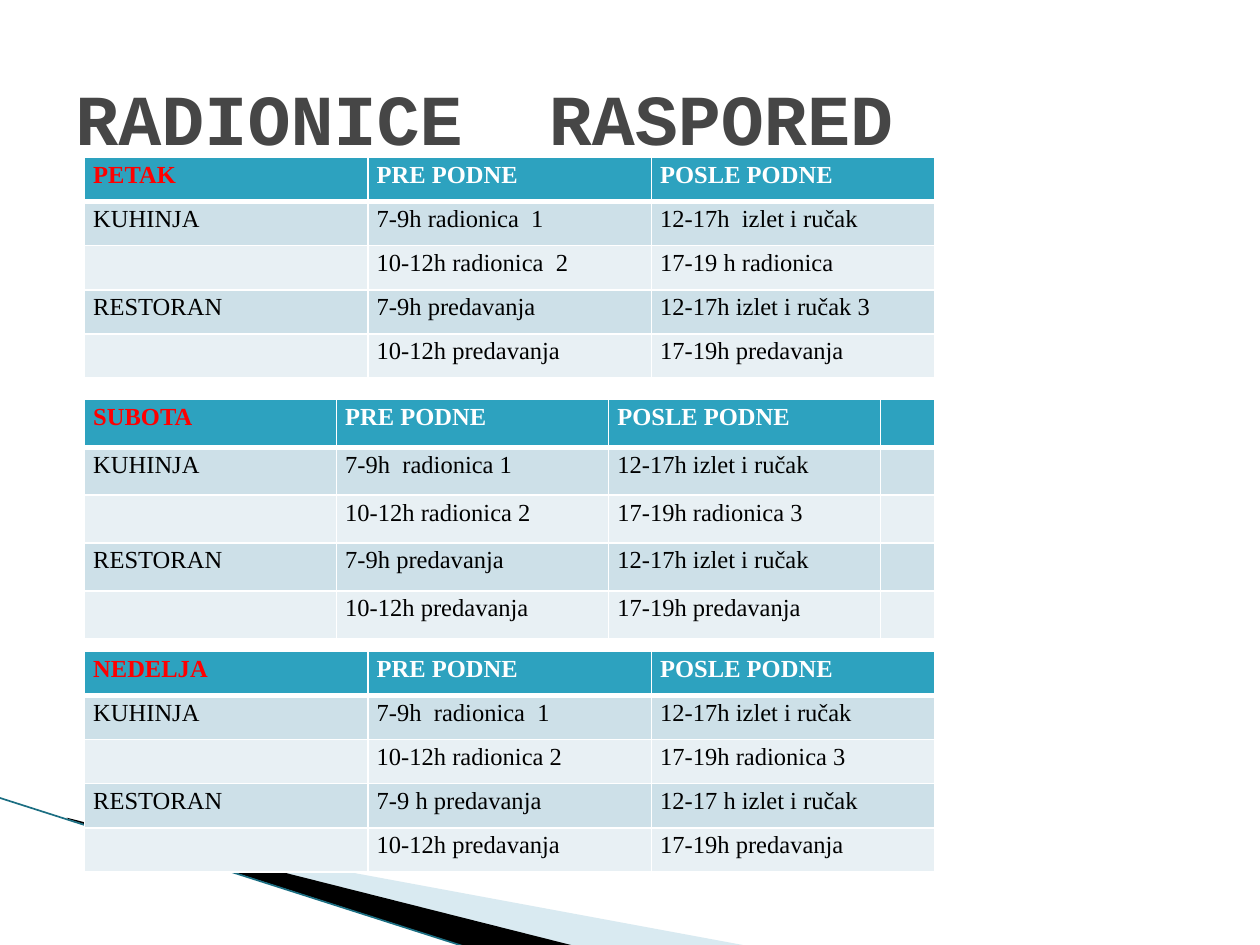
import pptx
import pptx.util
import pptx.dml.color
import pptx.enum.shapes
import pptx.enum.text
import pptx.oxml
import pptx.oxml.ns
import lxml.etree

Inches = pptx.util.Inches
Pt = pptx.util.Pt

COLORS = {
    "title": "464646",
    "day": "FF0000",
    "white": "FFFFFF",
    "black": "000000",
    "header": "2DA2BF",
    "odd": "CDE0E8",
    "even": "E8F0F4",
    "pale": "A0CBDC",
    "edge": "1B6E82",
}
TABLE_LEFT = 0.67
THREE_COLUMNS = [2.25, 2.25, 2.25]
FOUR_COLUMNS = [2, 2.16, 2.16, 0.43]
HEADINGS = ["PRE PODNE", "POSLE PODNE"]
ROW_LABELS = ["KUHINJA", "", "RESTORAN", ""]

SCHEDULES = [
    ("PETAK", 1.25, 0.35, THREE_COLUMNS, [
        ("7-9h radionica  1", "12-17h  izlet i ručak"),
        ("10-12h radionica  2", "17-19 h radionica"),
        ("7-9h predavanja", "12-17h izlet i ručak 3"),
        ("10-12h predavanja", "17-19h predavanja"),
    ]),
    ("SUBOTA", 3.17, 0.38, FOUR_COLUMNS, [
        ("7-9h  radionica 1", "12-17h izlet i ručak"),
        ("10-12h radionica 2", "17-19h radionica 3"),
        ("7-9h predavanja", "12-17h izlet i ručak"),
        ("10-12h predavanja", "17-19h predavanja"),
    ]),
    ("NEDELJA", 5.17, 0.35, THREE_COLUMNS, [
        ("7-9h  radionica  1", "12-17h izlet i ručak"),
        ("10-12h radionica 2", "17-19h radionica 3"),
        ("7-9 h predavanja", "12-17 h izlet i ručak"),
        ("10-12h predavanja", "17-19h predavanja"),
    ]),
]


def rgb(name):
    return pptx.dml.color.RGBColor.from_string(COLORS[name])


def add_span(para, text, font, size, color, bold):
    span = para.add_run()
    span.text = text
    span.font.name = font
    span.font.size = Pt(size)
    span.font.bold = bold
    span.font.color.rgb = rgb(color)


def add_wedge(page, points, color, opacity=100):
    corners = [(Inches(x), Inches(y)) for x, y in points]
    builder = page.shapes.build_freeform(*corners[0])
    builder.add_line_segments(corners[1:], close=True)
    wedge = builder.convert_to_shape()
    wedge.shadow.inherit = False
    wedge.fill.solid()
    wedge.fill.fore_color.rgb = rgb(color)
    wedge.line.fill.background()
    if opacity < 100:
        shade = wedge.fill._xPr.find(".//" + pptx.oxml.ns.qn("a:srgbClr"))
        alpha = lxml.etree.SubElement(shade, pptx.oxml.ns.qn("a:alpha"))
        alpha.set("val", str(opacity * 1000))


def add_edge(page, start, end):
    edge = page.shapes.add_connector(
        pptx.enum.shapes.MSO_CONNECTOR.STRAIGHT,
        *[Inches(value) for value in start + end])
    edge.line.color.rgb = rgb("edge")
    edge.line.width = Pt(0.95)
    lxml.etree.SubElement(edge._element.spPr, pptx.oxml.ns.qn("a:effectLst"))


def add_title(page, text):
    box = page.shapes.add_textbox(Inches(0.5), Inches(0.3), Inches(9), Inches(1.25))
    frame = box.text_frame
    frame.word_wrap = True
    frame.vertical_anchor = pptx.enum.text.MSO_ANCHOR.MIDDLE
    add_span(frame.paragraphs[0], text, "Courier New", 41, "title", True)


def set_borders(cell, widths):
    properties = cell._tc.get_or_add_tcPr()
    for side, width in widths.items():
        properties.append(pptx.oxml.parse_xml(
            f'<a:ln{side} {pptx.oxml.ns.nsdecls("a")} w="{Pt(width)}">'
            f'<a:solidFill><a:srgbClr val="{COLORS["white"]}"/></a:solidFill>'
            f'</a:ln{side}>'))


def style_cell(cell, row):
    cell.margin_left = cell.margin_right = Inches(0.07)
    cell.margin_top = cell.margin_bottom = 0
    set_borders(cell, {"L": 1, "R": 1, "T": 3 if row == 1 else 1, "B": 3 if row == 0 else 1})
    cell.fill.solid()
    band = "header" if row == 0 else "odd" if row % 2 else "even"
    cell.fill.fore_color.rgb = rgb(band)


def add_schedule(page, day, top, row_height, widths, sessions):
    rows = [[day, *HEADINGS]]
    rows += [[label, *pair] for label, pair in zip(ROW_LABELS, sessions)]
    table = page.shapes.add_table(
        len(rows), len(widths), Inches(TABLE_LEFT), Inches(top),
        Inches(sum(widths)), Inches(row_height * len(rows))).table
    table.horz_banding = False
    for column, width in zip(table.columns, widths):
        column.width = Inches(width)
    for row, texts in enumerate(rows):
        table.rows[row].height = Inches(row_height)
        for column in range(len(widths)):
            cell = table.cell(row, column)
            style_cell(cell, row)
            para = cell.text_frame.paragraphs[0]
            if column < len(texts) and texts[column]:
                para.line_spacing = 1.15
                color = "black" if row else "white" if column else "day"
                add_span(para, texts[column], "Times New Roman", 14, color, row == 0)
            else:
                para.font.size = Pt(14)


def main():
    deck = pptx.Presentation()
    deck.slide_width = Inches(10)
    deck.slide_height = Inches(7.5)
    page = deck.slides.add_slide(deck.slide_layouts[6])
    add_wedge(page, [(0.55, 6.51), (5.95, 7.51), (4.56, 7.51), (0.55, 6.5)], "pale", 40)
    add_wedge(page, [(0.53, 6.49), (4.57, 7.51), (3.72, 7.52), (0.54, 6.5)], "black")
    add_edge(page, (-0.01, 6.33), (3.71, 7.52))
    first, *others = SCHEDULES
    add_schedule(page, *first)
    add_title(page, "RADIONICE  RASPORED")
    for schedule in others:
        add_schedule(page, *schedule)
    deck.save("out.pptx")


if __name__ == "__main__":
    main()
